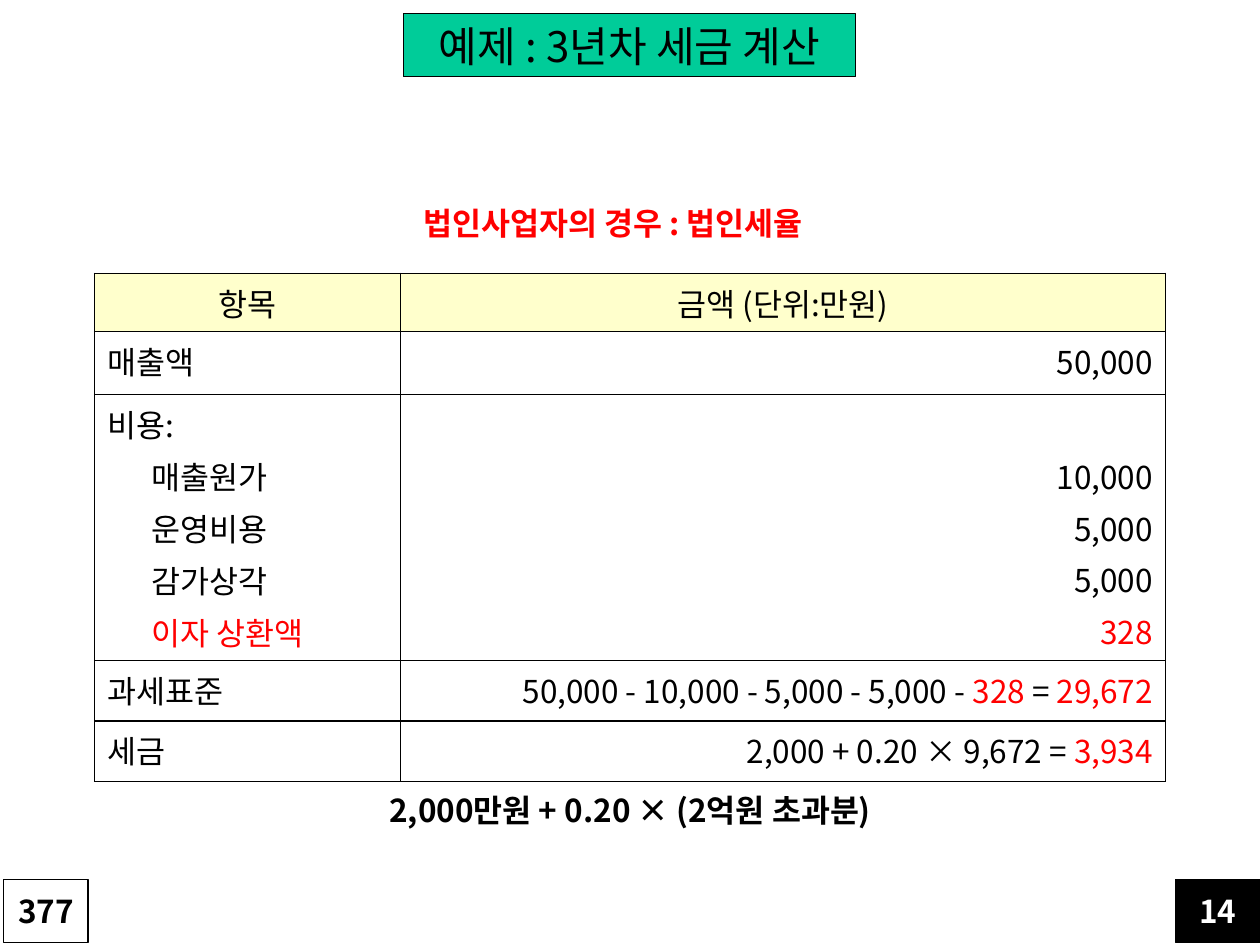
"""Build the slide that works out the corporate tax for year 3."""
import pptx
import pptx.util
import pptx.dml.color
import pptx.enum.shapes
import pptx.enum.text
from pptx.oxml.ns import qn
from lxml import etree

Inches, Pt = pptx.util.Inches, pptx.util.Pt
RGB = pptx.dml.color.RGBColor.from_string
ALIGN = pptx.enum.text.PP_ALIGN
ANCHOR = pptx.enum.text.MSO_ANCHOR
THEME = {
    "font": "Noto Sans CJK KR", "title": 24, "body": 18, "ink": "000000",
    "paper": "FFFFFF", "accent": "FF0000", "header": "FFFFCC", "banner": "00CC99",
}


def add_run(p, text, color="ink", size="body", bold=False):
    r = p.add_run()
    r.text = text
    r.font.name = THEME["font"]
    r.font.size = Pt(THEME[size])
    r.font.bold = bold
    r.font.color.rgb = RGB(THEME[color])
    ea = etree.SubElement(r.font._element, qn("a:ea"))
    ea.set("typeface", THEME["font"])


def style_box(sp, fill, line):
    sp.fill.solid()
    sp.fill.fore_color.rgb = RGB(THEME[fill])
    sp.line.color.rgb = RGB(THEME[line])
    sp.line.width = Pt(0.75)
    sp.text_frame.vertical_anchor = ANCHOR.MIDDLE


prs = pptx.Presentation()
prs.slide_width, prs.slide_height = Inches(10), Inches(7.5)
s = prs.slides.add_slide(prs.slide_layouts[5])

title = s.shapes.title
title.left, title.top = Inches(3.2), Inches(0.11)
title.width, title.height = Inches(3.59), Inches(0.5)
style_box(title, "banner", "ink")
title.text_frame.word_wrap = False
title.text_frame.auto_size = pptx.enum.text.MSO_AUTO_SIZE.NONE
p = title.text_frame.paragraphs[0]
p.alignment = ALIGN.CENTER
add_run(p, "예제 : 3년차 세금 계산", size="title")

rows = [
    (0.43, [[("항목", "ink")]], [[("금액 (단위:만원)", "ink")]]),
    (0.5, [[("매출액", "ink")]], [[("50,000", "ink")]]),
    (2.03,
     [[("비용:", "ink")], [("매출원가", "ink")], [("운영비용", "ink")],
      [("감가상각", "ink")], [("이자 상환액", "accent")]],
     [[("10,000", "ink")], [("5,000", "ink")], [("5,000", "ink")], [("328", "accent")]]),
    (0.48, [[("과세표준", "ink")]],
     [[("50,000 - 10,000 - 5,000 - 5,000 - ", "ink"), ("328", "accent"),
       (" = ", "ink"), ("29,672", "accent")]]),
    (0.48, [[("세금", "ink")]],
     [[("2,000 + 0.20 × 9,672 = ", "ink"), ("3,934", "accent")]]),
]
table = s.shapes.add_table(
    len(rows), 2, Inches(0.75), Inches(2.17), Inches(8.5), Inches(3.92)).table
for column, width in zip(table.columns, (2.43, 6.07)):
    column.width = Inches(width)

for i, (height, *contents) in enumerate(rows):
    table.rows[i].height = Inches(height)
    for j, paragraphs in enumerate(contents):
        cell = table.cell(i, j)
        tcPr = cell._tc.get_or_add_tcPr()
        for side in ("lnL", "lnR", "lnT", "lnB"):
            ln = etree.SubElement(tcPr, qn(f"a:{side}"), w=str(Pt(1)))
            solid = etree.SubElement(ln, qn("a:solidFill"))
            etree.SubElement(solid, qn("a:srgbClr"), val=THEME["ink"])
        cell.fill.solid()
        cell.fill.fore_color.rgb = RGB(THEME["paper" if i else "header"])
        skipped_lines = len(contents[0]) - len(paragraphs)
        cell.margin_top = Inches(0.05 + 0.41 * skipped_lines)
        for k, runs in enumerate(paragraphs):
            tf = cell.text_frame
            p = tf.add_paragraph() if k else tf.paragraphs[0]
            p.space_before = Pt(3.6)
            p.alignment = (ALIGN.LEFT, ALIGN.RIGHT)[j] if i else ALIGN.CENTER
            if j == 0 and k:
                p._p.get_or_add_pPr().set("marL", str(Inches(0.35)))
            for text, color in runs:
                add_run(p, text, color)

captions = [
    (3.26, 1.57, 3.48, "법인사업자의 경우 : 법인세율", "accent", ALIGN.LEFT),
    (2.99, 6.23, 4.02, "2,000만원 + 0.20 × (2억원 초과분)", "ink", ALIGN.CENTER),
]
for left, top, width, text, color, align in captions:
    sp = s.shapes.add_textbox(Inches(left), Inches(top), Inches(width), Inches(0.4))
    sp.text_frame.word_wrap = True
    p = sp.text_frame.paragraphs[0]
    p.alignment = align
    add_run(p, text, color, bold=True)

page_boxes = [(9.33, "14", "ink", "paper"), (0.03, "377", "paper", "ink")]
for left, text, fill, color in page_boxes:
    sp = s.shapes.add_shape(
        pptx.enum.shapes.MSO_SHAPE.RECTANGLE,
        Inches(left), Inches(6.98), Inches(0.67), Inches(0.5))
    sp.shadow.inherit = False
    style_box(sp, fill, "ink")
    p = sp.text_frame.paragraphs[0]
    p.alignment = ALIGN.CENTER
    add_run(p, text, color, bold=True)

prs.save("out.pptx")
